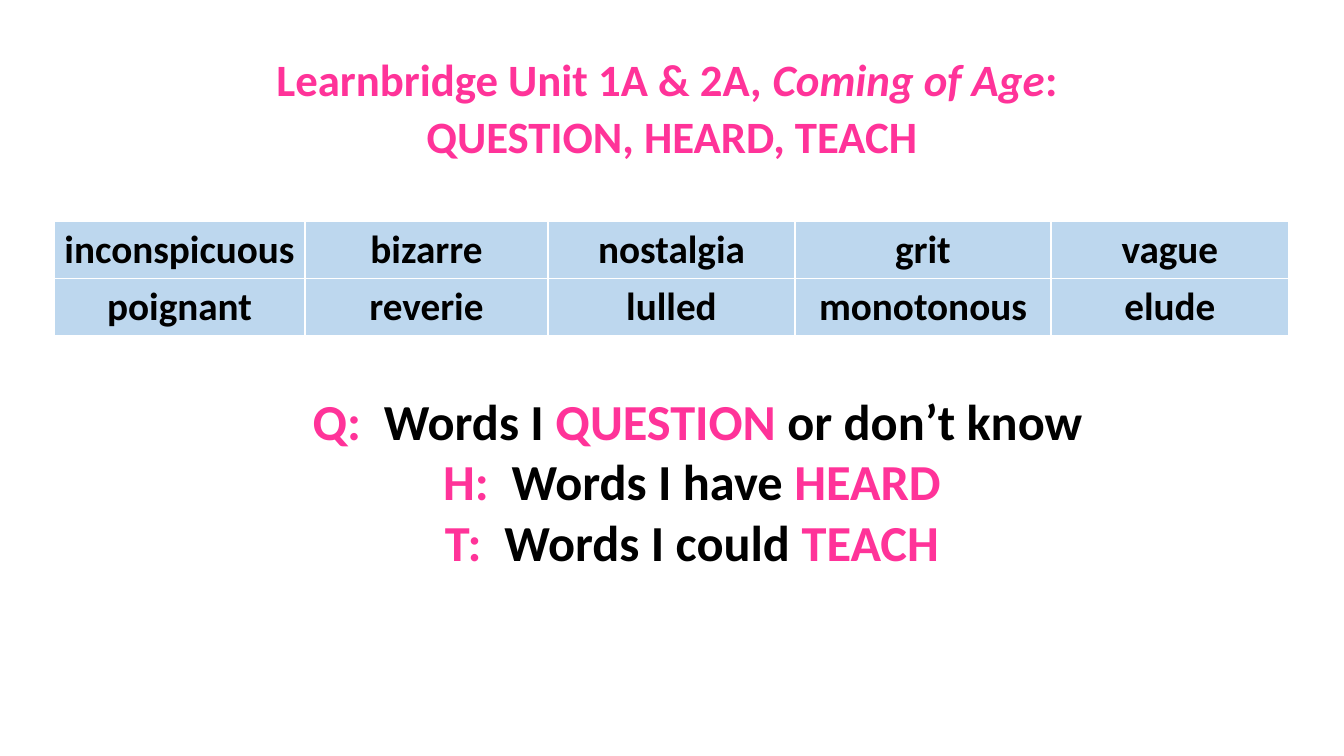
import pptx
import pptx.util
import pptx.dml.color
import pptx.enum.text

PX = 914400 / 100.8
PINK = pptx.dml.color.RGBColor(0xFF, 0x33, 0x99)
BLACK = pptx.dml.color.RGBColor(0, 0, 0)
BLUE = pptx.dml.color.RGBColor(0xBD, 0xD7, 0xEE)


def px(n):
    return pptx.util.Emu(round(n * PX))


def style(p, size):
    p.alignment = pptx.enum.text.PP_ALIGN.CENTER
    p.font.name = "Calibri"
    p.font.size = pptx.util.Pt(size)
    p.font.bold = True


prs = pptx.Presentation()
prs.slide_width, prs.slide_height = px(1344), px(756)
s = prs.slides.add_slide(prs.slide_layouts[6])

title = [
    [("Learnbridge Unit 1A & 2A, ", False), ("Coming of Age", True), (": ", False)],
    [("QUESTION, HEARD, TEACH", False)],
]
tf = s.shapes.add_textbox(px(168), px(57), px(1008), px(114)).text_frame
tf.word_wrap = True
for i, runs in enumerate(title):
    p = tf.add_paragraph() if i else tf.paragraphs[0]
    style(p, 32)
    p.font.color.rgb = PINK
    p.line_spacing = 0.8
    if i:
        p.space_before = pptx.util.Pt(10)
    for text, italic in runs:
        r = p.add_run()
        r.text = text
        if italic:
            r.font.italic = True

words = [
    ["inconspicuous", "bizarre", "nostalgia", "grit", "vague"],
    ["poignant", "reverie", "lulled", "monotonous", "elude"],
]
widths = [251, 243, 247, 256, 238]
table = s.shapes.add_table(2, 5, px(54), px(221), px(sum(widths)), px(114)).table
for col, width in zip(table.columns, widths):
    col.width = px(width)
for row, row_words in zip(table.rows, words):
    for cell, word in zip(row.cells, row_words):
        cell.fill.solid()
        cell.fill.fore_color.rgb = BLUE
        cell.text = word
        p = cell.text_frame.paragraphs[0]
        style(p, 28)
        p.font.color.rgb = BLACK

key = [
    [(" Q:  ", PINK), ("Words I ", BLACK), ("QUESTION", PINK), (" or don’t know", BLACK)],
    [("H:  ", PINK), ("Words I have ", BLACK), ("HEARD", PINK)],
    [("T:  ", PINK), ("Words I could ", BLACK), ("TEACH", PINK)],
]
tf = s.shapes.add_textbox(px(168), px(385), px(1048), px(224)).text_frame
tf.word_wrap = True
for i, runs in enumerate(key):
    p = tf.add_paragraph() if i else tf.paragraphs[0]
    style(p, 36)
    for text, color in runs:
        r = p.add_run()
        r.text = text
        r.font.color.rgb = color

prs.save("out.pptx")
